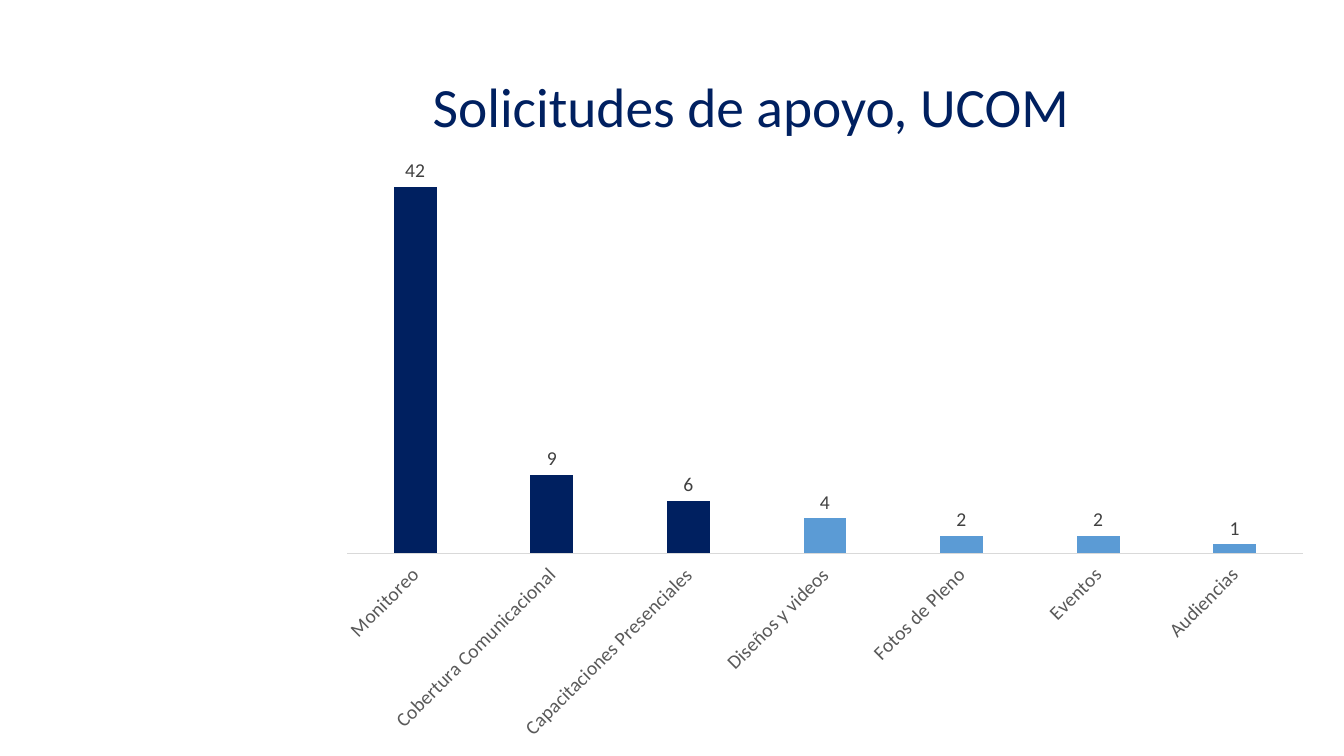
from dataclasses import dataclass

from lxml.etree import SubElement
from pptx import Presentation
from pptx.chart.data import CategoryChartData
from pptx.dml.color import RGBColor
from pptx.enum.chart import XL_CHART_TYPE, XL_LABEL_POSITION, XL_TICK_LABEL_POSITION, XL_TICK_MARK
from pptx.enum.text import MSO_ANCHOR, MSO_AUTO_SIZE, PP_ALIGN
from pptx.oxml.ns import qn
from pptx.util import Pt


@dataclass(frozen=True)
class Theme:
    font: str = "Calibri"
    navy: str = "002060"
    blue: str = "5B9BD5"
    axis_text: str = "595959"
    label_text: str = "404040"
    axis_line: str = "D9D9D9"
    background: str = "FFFFFF"
    title_size: float = 39.6
    chart_size: float = 14


@dataclass(frozen=True)
class Box:
    left: float
    top: float
    width: float
    height: float

    def lengths(self):
        return [Pt(value) for value in (self.left, self.top, self.width, self.height)]


THEME = Theme()
REQUESTS = {
    "Monitoreo": 42,
    "Cobertura Comunicacional": 9,
    "Capacitaciones Presenciales": 6,
    "Diseños y videos": 4,
    "Fotos de Pleno": 2,
    "Eventos": 2,
    "Audiencias": 1,
}
HIGHLIGHTED = 3
PLOT_AREA = {"x": 0.0225, "y": 0.02, "w": 0.958, "h": 0.657}


def set_attributes(target, values):
    for name, value in values.items():
        setattr(target, name, value)


def format_font(font, size, color):
    set_attributes(font, {"name": THEME.font, "size": Pt(size), "bold": False})
    font.color.rgb = RGBColor.from_string(color)


def paint(fill, color):
    fill.solid()
    fill.fore_color.rgb = RGBColor.from_string(color)


def add_title(page, box, text):
    title = page.shapes.title
    set_attributes(title, dict(zip(("left", "top", "width", "height"), box.lengths())))
    frame = title.text_frame
    set_attributes(frame, {
        "word_wrap": True,
        "auto_size": MSO_AUTO_SIZE.NONE,
        "vertical_anchor": MSO_ANCHOR.MIDDLE,
    })
    para = frame.paragraphs[0]
    set_attributes(para, {"alignment": PP_ALIGN.CENTER, "line_spacing": 0.9})
    span = para.add_run()
    span.text = text
    format_font(span.font, THEME.title_size, THEME.navy)


def place_plot(chart):
    plot_area = chart._chartSpace.chart.plotArea
    layout = plot_area.find(qn("c:layout"))
    if layout is None:
        layout = SubElement(plot_area, qn("c:layout"))
        plot_area.insert(0, layout)
    manual = SubElement(layout, qn("c:manualLayout"))
    settings = {"layoutTarget": "inner", "xMode": "edge", "yMode": "edge", **PLOT_AREA}
    for name, value in settings.items():
        SubElement(manual, qn(f"c:{name}")).set("val", str(value))


def format_axes(chart):
    categories = chart.category_axis
    set_attributes(categories, {
        "major_tick_mark": XL_TICK_MARK.NONE,
        "minor_tick_mark": XL_TICK_MARK.NONE,
        "tick_label_position": XL_TICK_LABEL_POSITION.LOW,
        "has_major_gridlines": False,
    })
    format_font(categories.tick_labels.font, THEME.chart_size, THEME.axis_text)
    body = categories._element.find(qn("c:txPr")).find(qn("a:bodyPr"))
    body.set("rot", "-2700000")
    body.set("vert", "horz")
    line = categories.format.line
    line.width = Pt(0.75)
    paint(line.fill, THEME.axis_line)
    set_attributes(chart.value_axis, {
        "visible": False,
        "has_major_gridlines": False,
        "minimum_scale": 0,
        "maximum_scale": 45,
    })


def format_columns(plot):
    set_attributes(plot, {"gap_width": 219, "overlap": -27, "vary_by_categories": False})
    series = plot.series[0]
    series.invert_if_negative = False
    paint(series.format.fill, THEME.blue)
    for index in range(HIGHLIGHTED):
        paint(series.points[index].format.fill, THEME.navy)
    labels = series.data_labels
    set_attributes(labels, {"show_value": True, "position": XL_LABEL_POSITION.OUTSIDE_END})
    format_font(labels.font, THEME.chart_size, THEME.label_text)


def add_requests_chart(page, box):
    data = CategoryChartData()
    data.categories = list(REQUESTS)
    data.add_series("Series 1", list(REQUESTS.values()))
    chart = page.shapes.add_chart(
        XL_CHART_TYPE.COLUMN_CLUSTERED, *box.lengths(), data
    ).chart
    set_attributes(chart, {"has_title": False, "has_legend": False})
    set_attributes(chart.font, {"name": THEME.font, "size": Pt(THEME.chart_size)})
    place_plot(chart)
    format_axes(chart)
    format_columns(chart.plots[0])


def main():
    deck = Presentation()
    set_attributes(deck, {"slide_width": Pt(960), "slide_height": Pt(540)})
    page = deck.slides.add_slide(deck.slide_layouts[5])
    paint(page.background.fill, THEME.background)
    add_title(page, Box(293.76, 33.84, 485.28, 88.56), "Solicitudes de apoyo, UCOM")
    add_requests_chart(page, Box(231.84, 106.56, 712.8, 426.24))
    deck.save("out.pptx")


if __name__ == "__main__":
    main()
